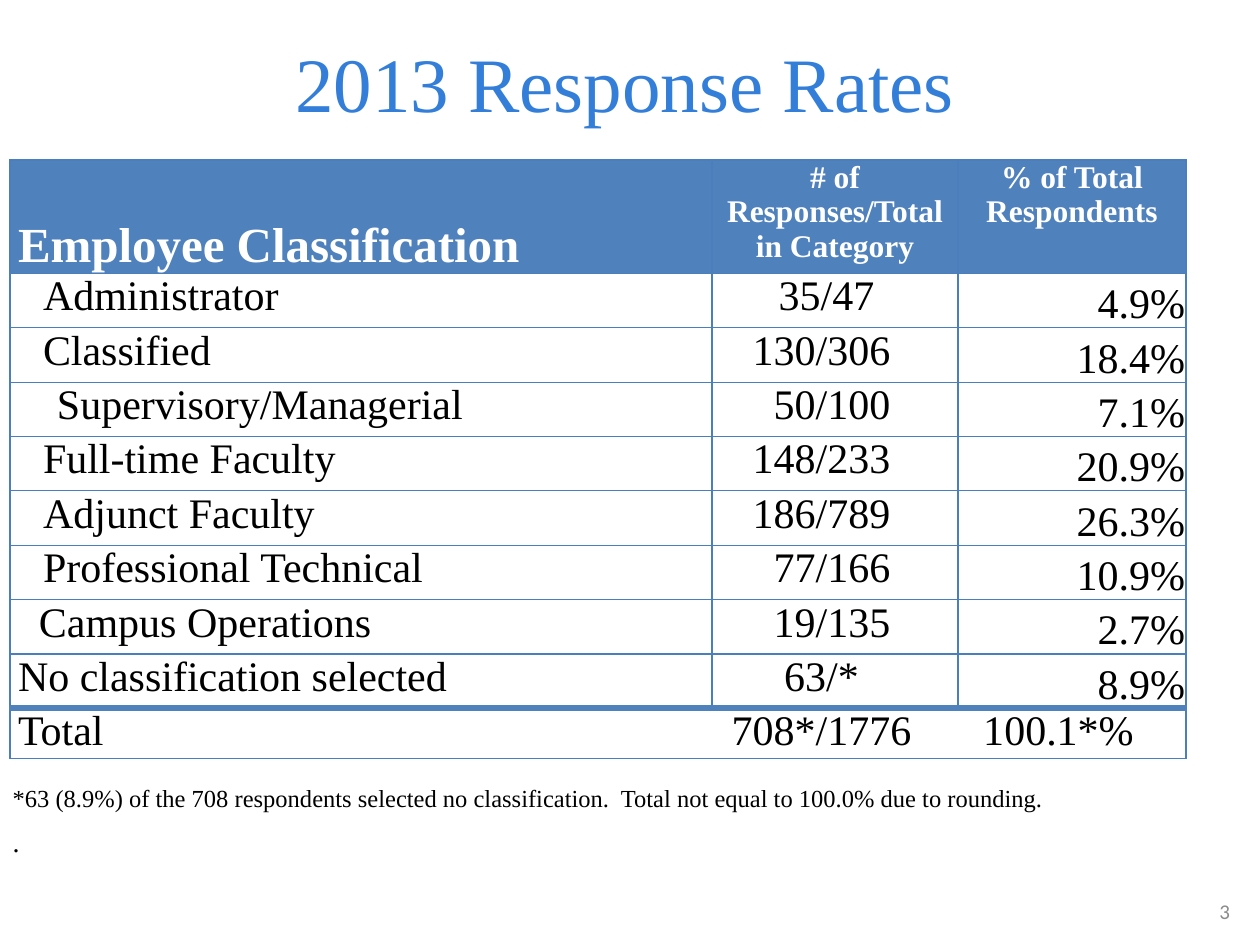
from lxml.etree import SubElement
from pptx import Presentation
from pptx.dml.color import RGBColor
from pptx.enum.text import MSO_ANCHOR, MSO_AUTO_SIZE, PP_ALIGN
from pptx.oxml.ns import qn
from pptx.util import Emu, Pt

COLORS = {
    "title": "337ED9",
    "header": "4F81BD",
    "grid": "4B7EBC",
    "text": "000000",
    "white": "FFFFFF",
    "number": "8C8C8C",
}
SERIF = "Times New Roman"
COLUMNS = (702, 246, 228)
HEADERS = (
    ("Employee Classification", 28),
    ("# of Responses/Total in Category", 18),
    ("% of Total Respondents", 18),
)
ROWS = (
    ("Administrator", 25, "35/47", 10, "4.9%"),
    ("Classified", 25, "130/306", 0, "18.4%"),
    ("Supervisory/Managerial", 39, "50/100", 21, "7.1%"),
    ("Full-time Faculty", 25, "148/233", 0, "20.9%"),
    ("Adjunct Faculty", 25, "186/789", 0, "26.3%"),
    ("Professional Technical", 25, "77/166", 21, "10.9%"),
    ("Campus Operations", 21, "19/135", 21, "2.7%"),
    ("No classification selected", 0, "63/*", 0, "8.9%"),
)
TOTALS = ("Total", "708*/1776", "100.1*%")
NOTES = (
    ("*63 (8.9%) of the 708 respondents selected no classification.  "
     "Total not equal to 100.0% due to rounding.", 14, 0),
    (".", 16, 7),
)


def px(length):
    return Emu(round(length * 914400 / 126))


def place(shape, box):
    shape.left, shape.top, shape.width, shape.height = map(px, box)


def add_text(paragraph, text, size, color, font=SERIF, bold=False):
    run = paragraph.add_run()
    run.text = text
    run.font.name = font
    run.font.size = Pt(size)
    run.font.bold = bold
    run.font.color.rgb = RGBColor.from_string(COLORS[color])


def set_indent(paragraph, left=0, right=0, first=0):
    properties = paragraph._p.get_or_add_pPr()
    for name, length in (("marL", left), ("marR", right), ("indent", first)):
        properties.set(name, str(px(length)))


def set_borders(cell, borders):
    properties = cell._tc.get_or_add_tcPr()
    for side in "LRTB":
        color, width = borders.get(side, (None, 0))
        line = SubElement(properties, qn(f"a:ln{side}"), w=str(Pt(width)))
        if color is None:
            SubElement(line, qn("a:noFill"))
        else:
            fill = SubElement(line, qn("a:solidFill"))
            SubElement(fill, qn("a:srgbClr"), val=COLORS[color])


def fill_cell(cell, text, size=24, color="text", bold=False, background="white",
              align=PP_ALIGN.LEFT, anchor=MSO_ANCHOR.TOP, left=0, right=0,
              margin=8, borders=None):
    cell.margin_left = cell.margin_right = px(margin)
    cell.margin_top = cell.margin_bottom = 0
    cell.vertical_anchor = anchor
    set_borders(cell, dict.fromkeys("LRTB", ("grid", 0.75)) if borders is None else borders)
    cell.fill.solid()
    cell.fill.fore_color.rgb = RGBColor.from_string(COLORS[background])
    paragraph = cell.text_frame.paragraphs[0]
    paragraph.alignment = align
    set_indent(paragraph, left, right)
    add_text(paragraph, text, size, color, bold=bold)


def add_title(slide, box):
    title = slide.shapes.title
    place(title, box)
    title.text_frame.vertical_anchor = MSO_ANCHOR.MIDDLE
    paragraph = title.text_frame.paragraphs[0]
    paragraph.alignment = PP_ALIGN.CENTER
    add_text(paragraph, "2013 Response Rates", 44, "title")


def add_response_table(slide, box):
    row_count = len(ROWS) + 2
    table = slide.shapes.add_table(row_count, len(COLUMNS), *map(px, box)).table
    table.horz_banding = False
    for column, width in zip(table.columns, COLUMNS):
        column.width = px(width)
    header_height, total_height = 108, 50
    body_height = px(box[3] - header_height - total_height)
    for row in table.rows:
        row.height = body_height // len(ROWS)
    table.rows[0].height = px(header_height)
    table.rows[row_count - 1].height = px(total_height)

    for index, (text, size) in enumerate(HEADERS):
        fill_cell(table.cell(0, index), text, size, "white", True, "header",
                  PP_ALIGN.CENTER if index else PP_ALIGN.LEFT,
                  MSO_ANCHOR.TOP if index else MSO_ANCHOR.BOTTOM)

    thin, thick = ("grid", 0.75), ("header", 4)
    for index, (label, indent, responses, shift, percent) in enumerate(ROWS, 1):
        borders = dict.fromkeys("LRTB", thin)
        if index == len(ROWS):
            borders["B"] = thick
        fill_cell(table.cell(index, 0), label, left=indent, borders=borders)
        fill_cell(table.cell(index, 1), responses, align=PP_ALIGN.CENTER,
                  left=shift, right=27, borders=borders)
        fill_cell(table.cell(index, 2), percent, align=PP_ALIGN.RIGHT,
                  anchor=MSO_ANCHOR.BOTTOM, margin=1, borders=borders)

    for index, text in enumerate(TOTALS):
        borders = {"T": thick, "B": thin}
        if index == 0:
            borders["L"] = thin
        if index == len(TOTALS) - 1:
            borders["R"] = thin
        fill_cell(table.cell(row_count - 1, index), text,
                  align=PP_ALIGN.CENTER if index else PP_ALIGN.LEFT,
                  right=27 if index else 0, borders=borders)


def add_notes_text(slide, box):
    body = slide.placeholders[1]
    place(body, box)
    frame = body.text_frame
    frame.auto_size = MSO_AUTO_SIZE.NONE
    for index, (text, size, space) in enumerate(NOTES):
        paragraph = frame.add_paragraph() if index else frame.paragraphs[0]
        paragraph.space_before = Pt(space)
        set_indent(paragraph, left=48, first=-48)
        SubElement(paragraph._p.get_or_add_pPr(), qn("a:buNone"))
        add_text(paragraph, text, size, "text")


def add_slide_number(slide, box):
    frame = slide.shapes.add_textbox(*map(px, box)).text_frame
    frame.margin_left = frame.margin_right = 0
    frame.margin_top = frame.margin_bottom = 0
    frame.word_wrap = True
    frame.vertical_anchor = MSO_ANCHOR.MIDDLE
    paragraph = frame.paragraphs[0]
    paragraph.alignment = PP_ALIGN.RIGHT
    add_text(paragraph, "3", 12, "number", "Calibri")


def main():
    presentation = Presentation()
    presentation.slide_width = px(1260)
    presentation.slide_height = px(945)
    slide = presentation.slides.add_slide(presentation.slide_layouts[1])
    add_title(slide, (58, 3, 1134, 157))
    add_notes_text(slide, (0, 777, 1166, 84))
    add_slide_number(slide, (1207, 892, 23, 38))
    add_response_table(slide, (10, 160, 1176, 593))
    presentation.save("out.pptx")


if __name__ == "__main__":
    main()
